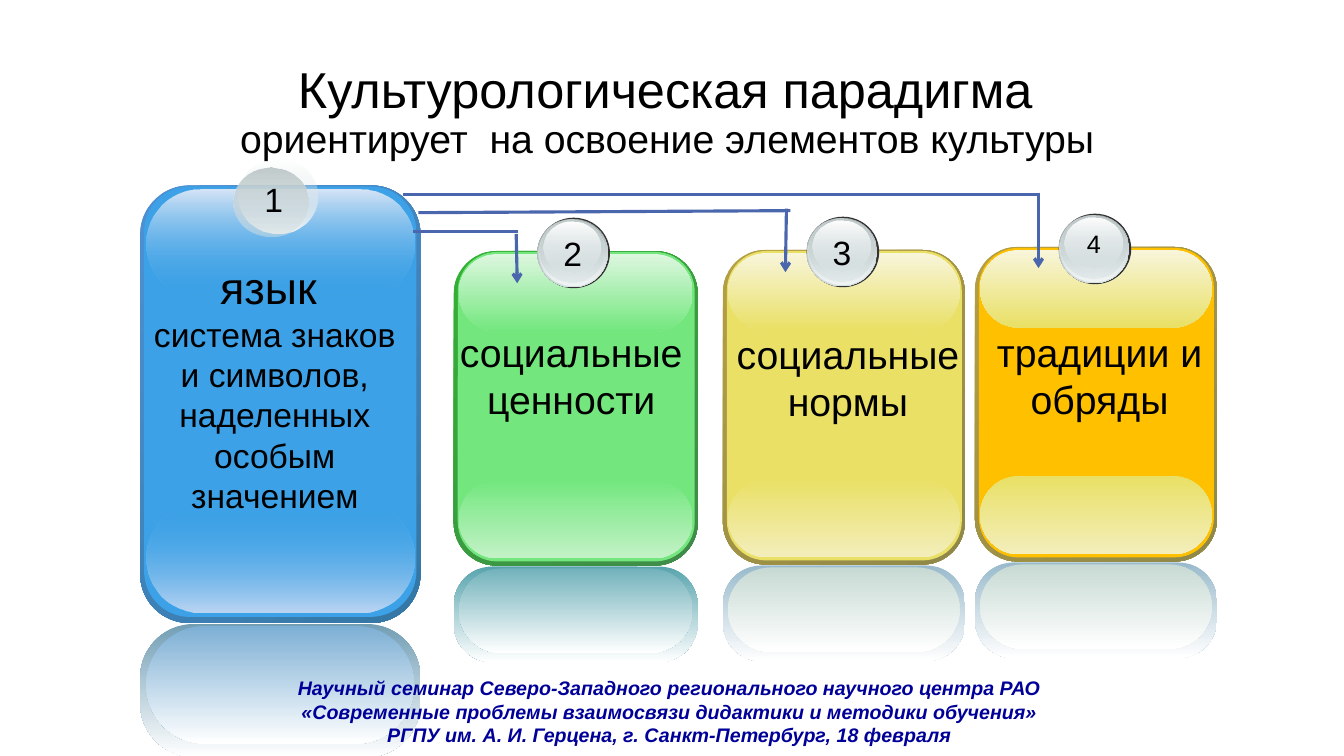
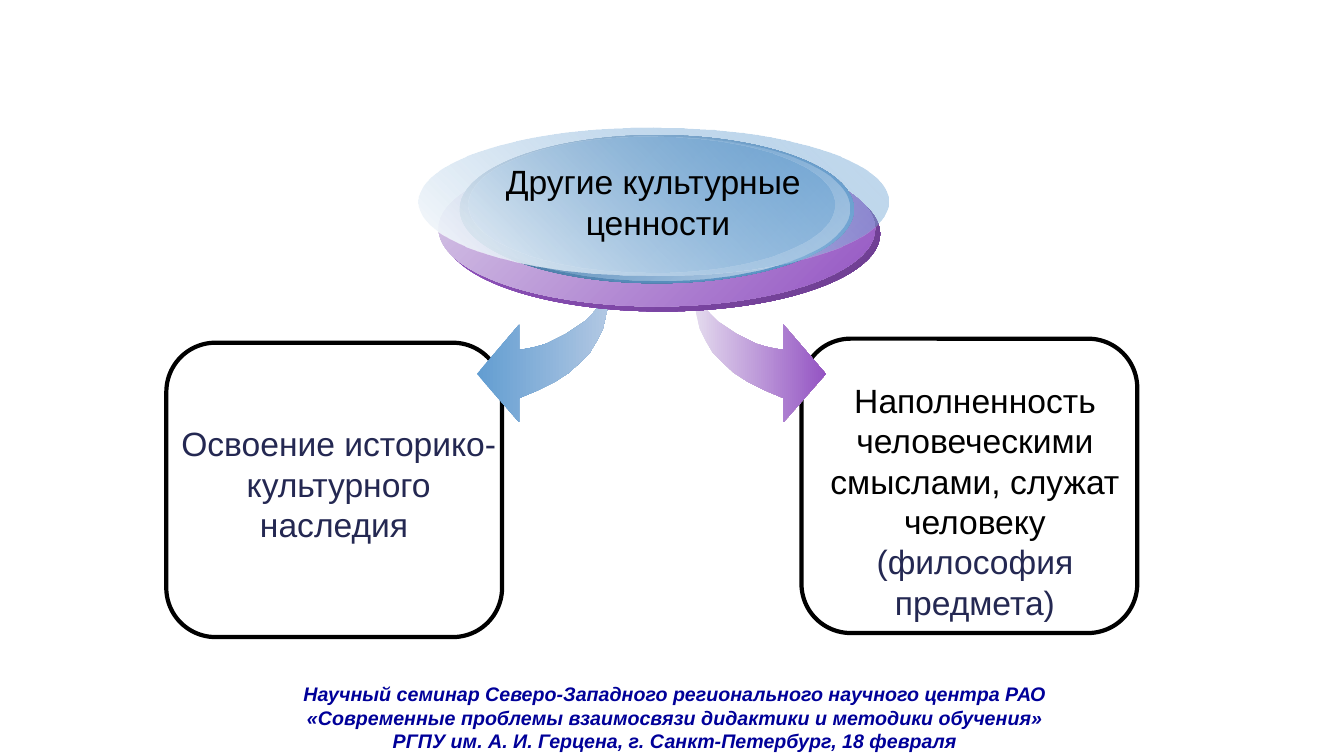
"""Build two slides on the cultural paradigm."""
from dataclasses import dataclass
from typing import NamedTuple

from lxml import etree
from pptx import Presentation
from pptx.dml.color import RGBColor
from pptx.enum.shapes import MSO_CONNECTOR, MSO_SHAPE
from pptx.enum.text import MSO_ANCHOR, PP_ALIGN
from pptx.oxml.ns import qn
from pptx.util import Pt

PX = 9144
ROUND = MSO_SHAPE.ROUNDED_RECTANGLE
OVAL = MSO_SHAPE.OVAL
STRAIGHT = MSO_CONNECTOR.STRAIGHT
CENTER = PP_ALIGN.CENTER
TOP = MSO_ANCHOR.TOP
MIDDLE = MSO_ANCHOR.MIDDLE


@dataclass(frozen=True)
class Theme:
    """Colours, font and type sizes of the deck."""
    font: str = "Arial"
    ink: str = "000000"
    navy: str = "242852"
    foot: str = "000099"
    wire: str = "4A66AC"
    ring: str = "333333"
    white: str = "FFFFFF"
    blue: str = "629DD1"
    plum: str = "9454C3"
    sky: str = "3CA1E6"
    green: str = "73E77E"
    sand: str = "E9E065"
    gold: str = "FFC000"
    mist: str = "D6E1E2"
    steel: str = "C1CBCC"
    pale: str = "F2F5F5"
    head: int = 36
    lead: int = 32
    large: int = 28
    body: int = 24
    small: int = 18
    note: int = 14


T = Theme()


class Box(NamedTuple):
    """A frame in px."""
    x: int
    y: int
    w: int
    h: int


class Fade(NamedTuple):
    """A two-stop gradient with opacity in percent."""
    start: str
    end: str
    angle: int = 90
    first: int = 100
    last: int = 100


class Line(NamedTuple):
    """One paragraph of text."""
    text: str
    size: int = T.body
    color: str = T.ink


class Wire(NamedTuple):
    """A straight line, with or without an arrowhead."""
    x1: int
    y1: int
    x2: int
    y2: int
    tip: bool = False


class Part(NamedTuple):
    """A layer of a card as shares of its size, plus a px drop."""
    x: float
    y: float
    w: float
    h: float
    bend: float
    drop: int = 0


class Ring(NamedTuple):
    """A disc of a badge, offset from its corner."""
    box: Box
    fill: Fade | str


@dataclass(frozen=True)
class Card:
    """A glossy card with a badge and a label."""
    box: Box
    fills: tuple[Fade | str, ...]
    rings: tuple[Ring, ...]
    mark: Line
    spot: Box
    label: Box
    lines: tuple[Line, ...]


PARTS = (
    Part(0, 0, 1, 1, 0.175),
    Part(0.015, 0, 0.97, 0.983, 0.167, 1),
    Part(0.022, 0.727, 0.958, 0.25, 0.5),
    Part(0.022, 0.01, 0.958, 0.247, 0.5),
    Part(0, 1, 1, 0.304, 0.404, 1),
    Part(0.022, 1, 0.958, 0.27, 0.5, 3),
)

CLEAR = Fade(T.mist, T.pale, first=0)
SHADE = Fade(T.steel, T.mist, last=48)
DISC = (
    Ring(Box(0, 0, 72, 70), T.ring),
    Ring(Box(0, 1, 70, 68), Fade("99A1A2", T.mist)),
    Ring(Box(1, 1, 68, 66), CLEAR),
    Ring(Box(2, 2, 65, 62), SHADE),
    Ring(Box(6, 4, 57, 50), Fade(T.white, T.mist, last=38)),
)
HAZE = (Ring(Box(15, 6, 78, 75), CLEAR), Ring(Box(10, 15, 74, 69), SHADE))

SKY = (Fade("4E91D4", "3477A4", 45), T.sky, Fade(T.sky, "BDD6F3", first=0),
       Fade("D7E5F7", T.sky, last=0), Fade("729EB4", T.white),
       Fade("7DAFD4", T.white))
GREEN = (Fade("34B034", "3F8B4A", 45), T.green, Fade(T.green, "C3F2C7"),
         Fade("DDF7DF", T.green), Fade("58A4AE", T.white),
         Fade("72B2BB", T.white))
SAND = (Fade("B59F43", "8F8849", 45), T.sand, Fade(T.sand, "F3EEBB"),
        Fade("F8F5DB", T.sand), Fade("99BACC", T.white),
        Fade("C8DAD4", T.white))
GOLD = (SAND[0], T.gold, *SAND[2:])
SPOT = Box(15, 10, 40, 50)

CARDS = (
    Card(Box(139, 184, 278, 434), SKY, HAZE, Line("1"), Box(27, 22, 45, 69),
         Box(134, 253, 277, 266),
         (Line("язык ", T.lead),
          Line("система знаков и символов, наделенных особым значением"))),
    Card(Box(450, 249, 242, 312), GREEN, DISC, Line("2"), SPOT,
         Box(445, 321, 243, 104), (Line("социальные ценности", T.large),)),
    Card(Box(717, 248, 240, 312), SAND, DISC, Line("3"), SPOT,
         Box(716, 323, 250, 104), (Line("социальные нормы", T.large),)),
    Card(Box(967, 245, 240, 312), GOLD, DISC, Line("4", T.small), SPOT,
         Box(978, 321, 225, 104), (Line("традиции и обряды", T.large),)),
)

WIRES = (
    Wire(400, 193, 1029, 193), Wire(1030, 191, 1030, 266, True),
    Wire(415, 211, 784, 209), Wire(410, 230, 514, 230),
    Wire(512, 232, 513, 281, True), Wire(780, 207, 779, 270, True),
)

PLATE = (
    Ring(Box(440, 155, 433, 154), Fade(T.plum, "6C3D8F", 45)),
    Ring(Box(435, 150, 433, 154), Fade("D8CBE7", T.plum, 45)),
    Ring(Box(456, 134, 391, 147), Fade("467096", T.blue, 45)),
    Ring(Box(461, 135, 382, 143), Fade(T.blue, "D9E3F0", 45, 0)),
    Ring(Box(465, 136, 363, 134), Fade("598EBD", T.blue, 45, 100, 48)),
    Ring(Box(415, 127, 466, 146), Fade(T.white, T.blue, 315, 100, 38)),
)

ARROW = (
    (604, 283), (604, 299), (601, 313), (598, 326), (592, 338), (585, 350),
    (575, 360), (564, 370), (550, 379), (534, 387), (515, 395), (515, 419),
    (473, 371), (515, 322), (515, 347), (523, 346), (532, 344), (542, 341),
    (552, 336), (562, 331), (571, 325), (580, 319), (587, 312), (594, 304),
    (599, 297), (603, 290),
)
AXIS = 1292

FOOT = "\v".join((
    "Научный семинар Северо-Западного регионального научного центра РАО",
    "«Современные проблемы взаимосвязи дидактики и методики обучения»",
    "РГПУ им. А. И. Герцена, г. Санкт-Петербург, 18 февраля",
))


def emu(box: Box) -> tuple[int, ...]:
    """Turn a px frame into EMU."""
    return tuple(n * PX for n in box)


def paint(shape, fill: Fade | str | None) -> None:
    """Fill a shape and drop its outline and shadow."""
    shape.shadow.inherit = False
    shape.line.fill.background()
    if fill is None:
        shape.fill.background()
    elif isinstance(fill, str):
        shape.fill.solid()
        shape.fill.fore_color.rgb = RGBColor.from_string(fill)
    else:
        shape.fill.gradient()
        shape.fill.gradient_angle = -fill.angle % 360
        for stop, tint in zip(shape.fill.gradient_stops, fill[:2]):
            stop.color.rgb = RGBColor.from_string(tint)
        for node, rate in zip(shape.element.iter(qn("a:gs")), fill[3:]):
            if rate < 100:
                etree.SubElement(node[0], qn("a:alpha"), val=str(rate * 1000))


def draw(slide, kind, box: Box, fill: Fade | str | None, bend: float = 0):
    """Add a preset shape."""
    shape = slide.shapes.add_shape(kind, *emu(box))
    if bend:
        shape.adjustments[0] = bend
    paint(shape, fill)
    return shape


def style(run, size: int, color: str, bold: bool = False) -> None:
    """Format a run; bold text is italic too."""
    font = run.font
    font.name, font.size = T.font, Pt(size)
    font.color.rgb = RGBColor.from_string(color)
    if bold:
        font.bold = font.italic = True


def write(frame, lines: tuple[Line, ...], wrap: bool = True,
          anchor=TOP, bold: bool = False) -> None:
    """Set centred paragraphs in a text frame."""
    frame.text = "\n".join(line.text for line in lines)
    frame.word_wrap, frame.vertical_anchor = wrap, anchor
    for para, line in zip(frame.paragraphs, lines):
        para.alignment = CENTER
        for run in para.runs:
            style(run, line.size, line.color, bold)


def label(slide, box: Box, *lines: Line, wrap: bool = True,
          bold: bool = False) -> None:
    """Add a text box."""
    area = slide.shapes.add_textbox(*emu(box))
    write(area.text_frame, lines, wrap, bold=bold)


def footer(slide, box: Box) -> None:
    """Add the seminar line."""
    label(slide, box, Line(FOOT, T.note, T.foot), bold=True)


def card(slide, item: Card) -> None:
    """Draw a card, its reflection and its badge."""
    x, y, w, h = item.box
    for part, fill in zip(PARTS, item.fills):
        box = Box(x + round(part.x * w), y + round(part.y * h) + part.drop,
                  round(part.w * w), round(part.h * h))
        draw(slide, ROUND, box, fill, part.bend)
    left, top = x + 83, y - 33
    for ring in item.rings:
        a, b, c, d = ring.box
        draw(slide, OVAL, Box(left + a, top + b, c, d), ring.fill)
    a, b, c, d = item.spot
    label(slide, Box(left + a, top + b, c, d), item.mark, wrap=False)


def link(slide, wire: Wire) -> None:
    """Draw a connector."""
    ends = (n * PX for n in wire[:4])
    line = slide.shapes.add_connector(STRAIGHT, *ends)
    line.line.width = Pt(2.25)
    line.line.color.rgb = RGBColor.from_string(T.wire)
    props = line.element.spPr
    if wire.tip:
        etree.SubElement(props.find(qn("a:ln")), qn("a:tailEnd"), type="arrow")
    etree.SubElement(props, qn("a:effectLst"))


def arrow(slide, dots: list[tuple[int, int]], fill: Fade) -> None:
    """Draw a curved arrow from its outline."""
    pen = slide.shapes.build_freeform(*dots[0], scale=PX)
    pen.add_line_segments(dots[1:], close=True)
    paint(pen.convert_to_shape(), fill)


def culture(deck) -> None:
    """Build the slide of four cards."""
    slide = deck.slides.add_slide(deck.slide_layouts[5])
    title = slide.shapes.title
    title.left, title.top, title.width, title.height = emu(
        Box(92, 40, 1150, 145))
    write(title.text_frame, (Line(
        "Культурологическая парадигма \v"
        "ориентирует  на освоение элементов культуры ", T.head),),
        anchor=MIDDLE)
    para = title.text_frame.paragraphs[0]
    para.line_spacing = 0.9
    style(para.runs[1], T.large, T.ink)
    for item in CARDS:
        card(slide, item)
    footer(slide, Box(18, 666, 1292, 80))
    for item in CARDS:
        label(slide, item.label, *item.lines)
    for wire in WIRES:
        link(slide, wire)


def values(deck) -> None:
    """Build the slide of the plate and two boxes."""
    slide = deck.slides.add_slide(deck.slide_layouts[6])
    for box in (Box(795, 336, 333, 292), Box(165, 340, 333, 292)):
        edge = draw(slide, ROUND, box, None, 0.167).line
        edge.color.rgb = RGBColor.from_string(T.ink)
        edge.width = Pt(3)
    arrow(slide, list(ARROW), Fade(T.blue, "B2C8E3", 0))
    arrow(slide, [(AXIS - x, y) for x, y in ARROW],
          Fade("E4DBEE", T.plum, 0))
    for ring in PLATE:
        plate = draw(slide, OVAL, ring.box, ring.fill)
    write(plate.text_frame, (Line("Другие культурные"), Line(" ценности")),
          False, MIDDLE)
    label(slide, Box(168, 415, 336, 133),
          Line("Освоение историко- культурного наследия ", color=T.navy))
    label(slide, Box(799, 372, 336, 254),
          Line("Наполненность человеческими смыслами, служат человеку"),
          Line("(философия предмета)", color=T.navy))
    footer(slide, Box(27, 672, 1285, 80))


def main() -> None:
    """Build and save the deck."""
    deck = Presentation()
    deck.slide_width, deck.slide_height = 1333 * PX, 750 * PX
    culture(deck)
    values(deck)
    deck.save("out.pptx")


if __name__ == "__main__":
    main()
